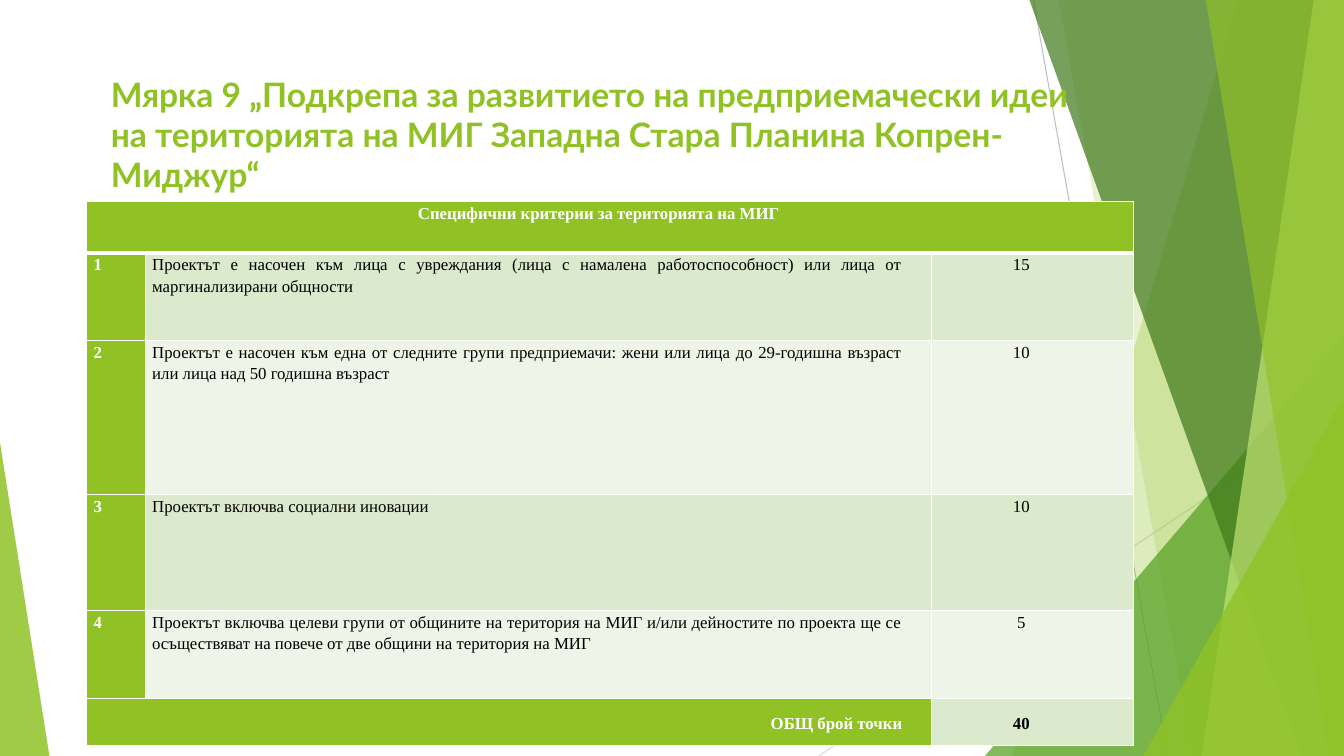
from collections import namedtuple

from lxml.etree import SubElement
from pptx import Presentation
from pptx.dml.color import RGBColor
from pptx.enum.shapes import MSO_CONNECTOR as Connector, MSO_SHAPE as Shape
from pptx.enum.text import MSO_ANCHOR as Anchor, PP_ALIGN as Align
from pptx.oxml.ns import qn
from pptx.util import Inches, Pt

COLORS = {
    "green": "90C226", "leaf": "54A021", "forest": "3F7819", "lime": "C0E474",
    "band": "DBE9CD", "pale": "EEF4E8", "white": "FFFFFF", "black": "000000",
    "gray": "BFBFBF", "silver": "D9D9D9",
}
COLUMNS, ROWS = 13.33, 7.5
Box = namedtuple("Box", "left top width height")

TITLE = ("Мярка 9 „Подкрепа за развитието на предприемачески идеи "
         "на територията на МИГ Западна Стара Планина Копрен-Миджур“")
HEADING = "Специфични критерии за територията на МИГ"
CRITERIA = [
    ("Проектът е насочен към лица с увреждания (лица с намалена работоспособност) "
     "или лица от маргинализирани общности", 15),
    ("Проектът е насочен към една от следните групи предприемачи: жени или лица "
     "до 29-годишна възраст или лица над 50 годишна възраст", 10),
    ("Проектът включва социални иновации", 10),
    ("Проектът включва целеви групи от общините на територия на МИГ и/или дейностите "
     "по проекта ще се осъществяват на повече от две общини на територия на МИГ", 5),
]
TOTAL_LABEL = "ОБЩ брой точки"
COLUMN_WIDTHS = [0.58, 7.8, 2]
ROW_HEIGHTS = [0.51, 0.87, 1.53, 1.15, 0.87, 0.47]

RAYS = [
    ("gray", (10.25, 0), (11.58, 7.5)),
    ("silver", (13.33, 4.03), (8.12, 7.5)),
]
FACETS = [
    ("green", 30, 12.28, 10.04),
    ("green", 20, 10.5, 11.83),
    ("leaf", 72, (9.77, 3.33, 3.56, 4.17), 1),
    ("forest", 70, 10.21, 12.91),
    ("lime", 70, 13.03, 11.92),
    ("green", 65, 11.96, 13.18),
    ("green", 80, (11.34, 3.93, 1.99, 3.57), 1),
    ("green", 85, (0, 4.39, 0.49, 3.11), 0),
]


def rgb(name):
    """Return the named colour."""
    return RGBColor.from_string(COLORS[name])


def place(box, column, row):
    """Return the point at a column and row of the box's grid."""
    return (box.left + round(box.width * column / COLUMNS),
            box.top + round(box.height * row / ROWS))


def sub_box(box, column, row, columns, rows):
    """Return the part of the box that covers the given grid area."""
    return Box(*place(box, column, row), *place(box._replace(left=0, top=0), columns, rows))


def paint(facet, color, opacity):
    """Give a facet a translucent fill without outline or shadow."""
    facet.shadow.inherit = False
    facet.line.fill.background()
    facet.fill.solid()
    facet.fill.fore_color.rgb = rgb(color)
    color_node = facet._element.spPr.find(qn("a:solidFill"))[0]
    SubElement(color_node, qn("a:alpha"), val=str(opacity * 1000))


def add_backdrop(slide, box):
    """Draw the thin rays and the overlapping facets."""
    for color, start, end in RAYS:
        ray = slide.shapes.add_connector(
            Connector.STRAIGHT, *place(box, *start), *place(box, *end))
        ray.line.color.rgb = rgb(color)
        ray.line.width = Pt(0.75)
        SubElement(ray._element.spPr, qn("a:effectLst"))
    for color, opacity, start, end in FACETS:
        if isinstance(start, tuple):
            facet = slide.shapes.add_shape(Shape.ISOSCELES_TRIANGLE, *sub_box(box, *start))
            facet.adjustments[0] = end
        else:
            outline = slide.shapes.build_freeform(*place(box, start, 0))
            outline.add_line_segments(
                [place(box, COLUMNS, 0), place(box, COLUMNS, ROWS), place(box, end, ROWS)])
            facet = outline.convert_to_shape()
        paint(facet, color, opacity)


def add_title(slide, box):
    """Write the title of the measure."""
    frame = slide.shapes.add_textbox(*box).text_frame
    frame.word_wrap = True
    frame.text = TITLE
    font = frame.paragraphs[0].runs[0].font
    font.name, font.size, font.bold = "Lato", Pt(24), True
    font.color.rgb = rgb("green")


def add_borders(cell, top, bottom):
    """Give a cell white borders of the given top and bottom widths."""
    for tag, width in (("lnL", 1), ("lnR", 1), ("lnT", top), ("lnB", bottom)):
        border = SubElement(cell._tc.get_or_add_tcPr(), qn(f"a:{tag}"), w=str(Pt(width)))
        SubElement(SubElement(border, qn("a:solidFill")), qn("a:srgbClr"), val=COLORS["white"])


def write_cell(cell, text, fill, align, bold):
    """Fill a cell and set its text with the indent on the right."""
    cell.fill.solid()
    cell.fill.fore_color.rgb = rgb(fill)
    cell.margin_left = cell.margin_right = Inches(0.07)
    cell.margin_top = cell.margin_bottom = 0
    cell.text = str(text)
    paragraph = cell.text_frame.paragraphs[0]
    paragraph.alignment, paragraph.line_spacing = align, 1.15
    paragraph._p.get_or_add_pPr().set("marR", str(Inches(0.22)))
    font = paragraph.runs[0].font
    font.name, font.size, font.bold = "Times New Roman", Pt(12), bold
    font.color.rgb = rgb("white" if fill == "green" else "black")


def add_criteria(slide, box):
    """Build the table of criteria, points and their total."""
    table = slide.shapes.add_table(len(ROW_HEIGHTS), len(COLUMN_WIDTHS), *box).table
    table.first_row = table.horz_banding = False
    for column, share in zip(table.columns, COLUMN_WIDTHS):
        column.width = round(box.width * share / sum(COLUMN_WIDTHS))
    for row, share in zip(table.rows, ROW_HEIGHTS):
        row.height = round(box.height * share / sum(ROW_HEIGHTS))
    last = len(ROW_HEIGHTS) - 1
    for index, row in enumerate(table.rows):
        for cell in row.cells:
            add_borders(cell, 3 if index == 1 else 1, 3 if index == 0 else 1)
    table.cell(0, 0).merge(table.cell(0, 2))
    table.cell(last, 0).merge(table.cell(last, 1))

    write_cell(table.cell(0, 0), HEADING, "green", Align.CENTER, True)
    for number, (criterion, points) in enumerate(CRITERIA, 1):
        fill = "band" if number % 2 else "pale"
        write_cell(table.cell(number, 0), number, "green", Align.JUSTIFY, True)
        write_cell(table.cell(number, 1), criterion, fill, Align.JUSTIFY, False)
        write_cell(table.cell(number, 2), points, fill, Align.CENTER, False)
    total = sum(points for _, points in CRITERIA)
    write_cell(table.cell(last, 0), TOTAL_LABEL, "green", Align.RIGHT, True)
    write_cell(table.cell(last, 2), total, "band", Align.CENTER, True)
    for column in (0, 2):
        table.cell(last, column).vertical_anchor = Anchor.MIDDLE


def main():
    """Build and save the presentation."""
    deck = Presentation()
    deck.slide_width, deck.slide_height = Inches(COLUMNS), Inches(ROWS)
    slide = deck.slides.add_slide(deck.slide_layouts[6])
    page = Box(0, 0, deck.slide_width, deck.slide_height)
    add_backdrop(slide, page)
    add_title(slide, sub_box(page, 1, 0.68, 9.92, 1.27))
    add_criteria(slide, sub_box(page, 0.86, 2, 10.38, 5.4))
    deck.save("out.pptx")


if __name__ == "__main__":
    main()
